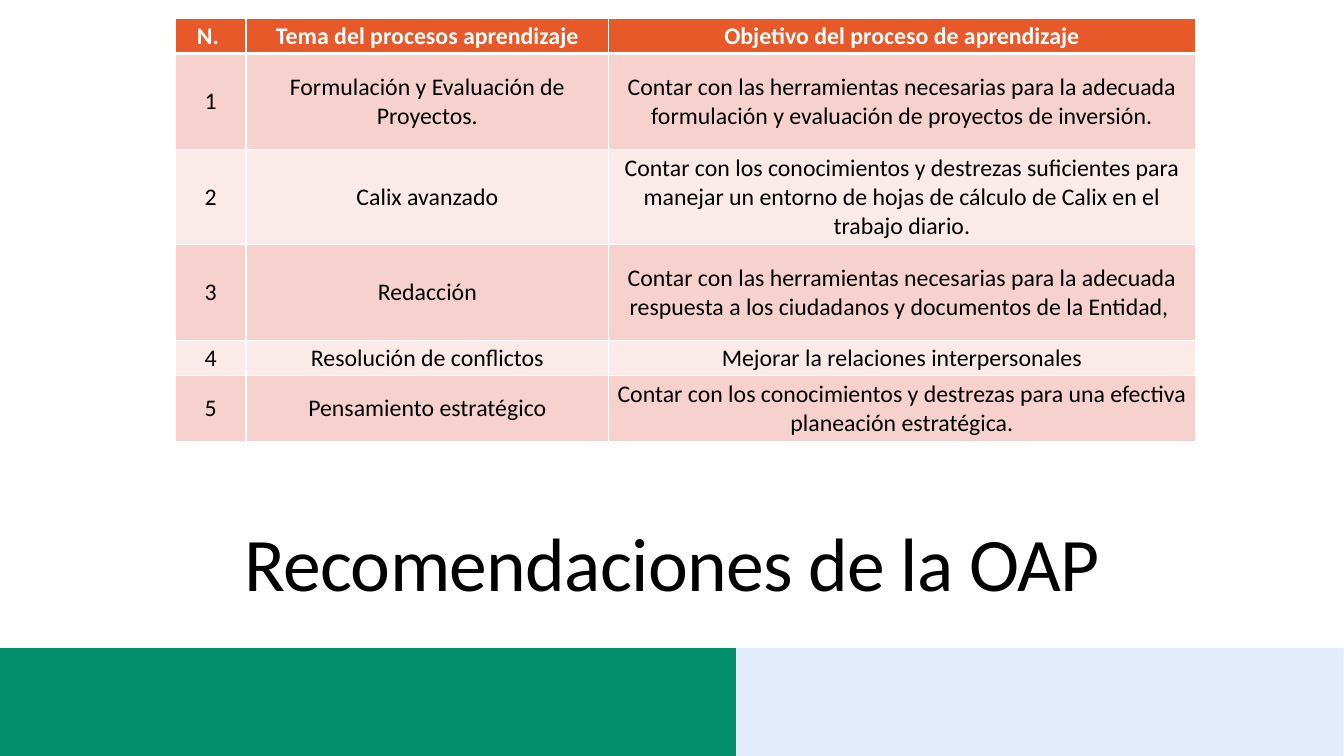
from lxml import etree
from pptx import Presentation
from pptx.dml.color import RGBColor
from pptx.enum.shapes import MSO_SHAPE
from pptx.enum.text import MSO_ANCHOR, PP_ALIGN
from pptx.oxml.ns import qn
from pptx.util import Cm, Pt

RECTANGLE = MSO_SHAPE.RECTANGLE
CENTER = PP_ALIGN.CENTER
MIDDLE, BOTTOM = MSO_ANCHOR.MIDDLE, MSO_ANCHOR.BOTTOM

SLIDE_WIDTH, SLIDE_HEIGHT = 33.87, 19.05
BAND_TOP = 16.33
COLUMN_WIDTHS = [1.78, 9.14, 14.78]
ROW_HEIGHTS = [0.89, 2.41, 2.41, 2.41, 0.89, 1.65]

HEADINGS = ["N. ", "Tema del procesos aprendizaje", "Objetivo del proceso de aprendizaje"]
COURSES = [
    ("Formulación y Evaluación de Proyectos.",
     "Contar con las herramientas necesarias para la adecuada formulación "
     "y evaluación de proyectos de inversión."),
    ("Calix avanzado",
     "Contar con los conocimientos y destrezas suficientes para manejar "
     "un entorno de hojas de cálculo de Calix en el trabajo diario."),
    ("Redacción",
     "Contar con las herramientas necesarias para la adecuada respuesta "
     "a los ciudadanos y documentos de la Entidad, "),
    ("Resolución de conflictos", "Mejorar la relaciones interpersonales"),
    ("Pensamiento estratégico",
     "Contar con los conocimientos y destrezas para una efectiva "
     "planeación estratégica."),
]


def color(value):
    return RGBColor.from_string(value)


class SlideBuilder:
    font = "Calibri"
    ink, white = "000000", "FFFFFF"
    header_fill = "E75929"
    row_fills = ["F6D1CD", "FAEAE8"]

    def __init__(self, slide):
        self.slide = slide

    def band(self, left, width, fill):
        band = self.slide.shapes.add_shape(
            RECTANGLE, Cm(left), Cm(BAND_TOP), Cm(width), Cm(SLIDE_HEIGHT - BAND_TOP))
        band.shadow.inherit = False
        band.fill.solid()
        band.fill.fore_color.rgb = color(fill)
        band.line.fill.background()

    def add_text(self, frame, text, size, ink, bold=False):
        paragraph = frame.paragraphs[0]
        paragraph.alignment = CENTER
        run = paragraph.add_run()
        run.text = text
        run.font.name = self.font
        run.font.size = Pt(size)
        run.font.bold = bold
        run.font.color.rgb = color(ink)
        return paragraph, run

    def title(self, text, left, top, width, height):
        frame = self.slide.shapes.add_textbox(
            Cm(left), Cm(top), Cm(width), Cm(height)).text_frame
        frame.word_wrap = True
        frame.vertical_anchor = BOTTOM
        paragraph, run = self.add_text(frame, text, 54, self.ink)
        paragraph.line_spacing = 0.8
        run._r.get_or_add_rPr().set("spc", "-50")

    def borders(self, cell, widths):
        properties = cell._tc.get_or_add_tcPr()
        for position, (side, width) in enumerate(widths.items()):
            line = etree.Element(qn(f"a:{side}"), w=str(Pt(width)))
            fill = etree.SubElement(line, qn("a:solidFill"))
            etree.SubElement(fill, qn("a:srgbClr"), val=self.white)
            properties.insert(position, line)

    def table(self, rows, left, top):
        table = self.slide.shapes.add_table(
            len(rows), len(COLUMN_WIDTHS), Cm(left), Cm(top),
            Cm(sum(COLUMN_WIDTHS)), Cm(sum(ROW_HEIGHTS))).table
        for column, width in zip(table.columns, COLUMN_WIDTHS):
            column.width = Cm(width)
        for index, (row, height, texts) in enumerate(zip(table.rows, ROW_HEIGHTS, rows)):
            row.height = Cm(height)
            is_header = index == 0
            fill = self.header_fill if is_header else self.row_fills[(index - 1) % 2]
            for cell, text in zip(row.cells, texts):
                cell.margin_left = cell.margin_right = 0
                cell.margin_top = cell.margin_bottom = 0
                cell.vertical_anchor = MIDDLE
                cell.fill.solid()
                cell.fill.fore_color.rgb = color(fill)
                self.add_text(cell.text_frame, text, 17,
                              self.white if is_header else self.ink, is_header)
                # A thicker rule separates the header from the body
                self.borders(cell, {"lnL": 1, "lnR": 1,
                                    "lnT": 3 if index == 1 else 1,
                                    "lnB": 3 if is_header else 1})


def main():
    presentation = Presentation()
    presentation.slide_width = Cm(SLIDE_WIDTH)
    presentation.slide_height = Cm(SLIDE_HEIGHT)
    builder = SlideBuilder(presentation.slides.add_slide(presentation.slide_layouts[6]))

    # Footer bands
    builder.band(-0.05, 18.6, "018E6B")
    builder.band(18.56, 15.3, "E2ECFD")

    # Title
    builder.title("Recomendaciones de la OAP", 2.97, 12.52, 27.94, 2.87)

    # Learning topics, numbered from 1
    numbered = [(str(number), *course) for number, course in enumerate(COURSES, 1)]
    builder.table([HEADINGS, *numbered], 4.42, 0.46)

    presentation.save("out.pptx")


if __name__ == "__main__":
    main()
